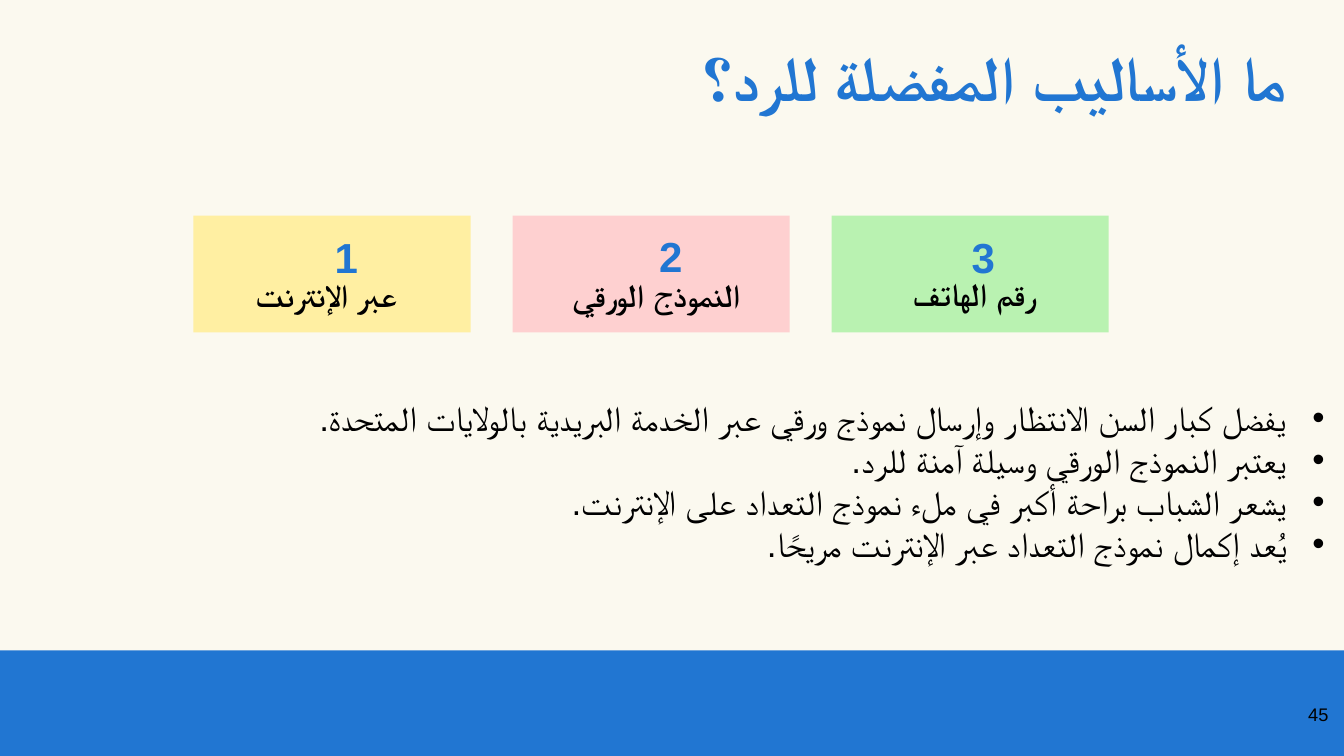
import pptx
import pptx.util
import pptx.dml.color
import pptx.enum.shapes
import pptx.enum.text
import pptx.oxml.ns
from lxml import etree

Pt = pptx.util.Pt
RGB = pptx.dml.color.RGBColor.from_string
ALIGN = pptx.enum.text.PP_ALIGN
RECT = pptx.enum.shapes.MSO_SHAPE.RECTANGLE
qn = pptx.oxml.ns.qn

THEME = {
    "paper": "FBF9EF", "blue": "2176D2", "script": "Arial",
    "title": {"name": "Montserrat", "size": 45, "bold": True, "color": "2176D2"},
    "number": {"name": "Montserrat", "size": 30, "bold": True, "color": "2176D2"},
    "label": {"name": "Open Sans", "size": 23, "bold": True, "color": "000000"},
    "body": {"name": "Open Sans", "size": 25, "bold": False, "color": "000000"},
    "page": {"name": "Calibri", "size": 13, "bold": False, "color": "000000"},
}


def write(sp, box, lines, style, align=ALIGN.RIGHT, bullet=False):
    """Place a text shape and fill it with right-to-left paragraphs."""
    sp.left, sp.top, sp.width, sp.height = map(Pt, box)
    tf = sp.text_frame
    frame = {"word_wrap": True, "auto_size": pptx.enum.text.MSO_AUTO_SIZE.NONE,
             "vertical_anchor": pptx.enum.text.MSO_ANCHOR.TOP}
    for name, value in frame.items():
        setattr(tf, name, value)
    for i, line in enumerate(lines):
        p = tf.paragraphs[0] if i == 0 else tf.add_paragraph()
        pPr = p._p.get_or_add_pPr()
        pPr.set("rtl", "1")
        if bullet:
            pPr.set("marL", str(Pt(27)))
            pPr.set("indent", str(-Pt(27)))
            clr = etree.SubElement(pPr, qn("a:buClr"))
            etree.SubElement(clr, qn("a:srgbClr"), val=THEME[style]["color"])
            etree.SubElement(pPr, qn("a:buFont"), typeface="Arial")
            etree.SubElement(pPr, qn("a:buChar"), char="•")
        layout = {"alignment": align, "line_spacing": 1.0,
                  "space_before": Pt(0), "space_after": Pt(0)}
        for name, value in layout.items():
            setattr(p, name, value)
        r = p.add_run()
        r.text = line
        fmt = THEME[style]
        for name in ("name", "bold"):
            setattr(r.font, name, fmt[name])
        r.font.size = Pt(fmt["size"])
        r.font.color.rgb = RGB(fmt["color"])
        etree.SubElement(r._r.get_or_add_rPr(), qn("a:cs"), typeface=THEME["script"])


def block(s, box, color):
    """Add a plain filled rectangle."""
    sp = s.shapes.add_shape(RECT, *map(Pt, box))
    sp.shadow.inherit = False
    sp.fill.solid()
    sp.fill.fore_color.rgb = RGB(color)
    sp.line.fill.background()


# Slide and background
prs = pptx.Presentation()
prs.slide_width, prs.slide_height = Pt(960), Pt(540)
s = prs.slides.add_slide(prs.slide_layouts[1])
s.background.fill.solid()
s.background.fill.fore_color.rgb = RGB(THEME["paper"])

# Footer band
block(s, (0, 464.5, 960, 75.5), THEME["blue"])

# Title
write(s.shapes.title, (24.5, 23.8, 902, 100), ["ما الأساليب المفضلة للرد؟"], "title")

# Ranked response methods: text, colour, label left and top, number left and top
methods = [
    ("عبر الإنترنت", "FFEFA2", (105.1, 193), (225.4, 162)),
    ("النموذج الورقي", "FED0D0", (340.6, 193), (457.2, 161.3)),
    ("رقم الهاتف", "B9F2B1", (567.4, 192.2), (680.4, 162)),
]
for i, (label, color, label_at, number_at) in enumerate(methods):
    block(s, (138.2 + i * 227.9, 154, 198, 83.5), color)
    write(s.shapes.add_textbox(0, 0, 0, 0), (*label_at, 256.3, 46), [label],
          "label", ALIGN.CENTER)
    write(s.shapes.add_textbox(0, 0, 0, 0), (*number_at, 37.4, 44), [str(i + 1)],
          "number")

# Reasons
write(s.placeholders[1], (116, 279.4, 837.4, 180), [
    "يفضل كبار السن الانتظار وإرسال نموذج ورقي عبر الخدمة البريدية بالولايات المتحدة.",
    "يعتبر النموذج الورقي وسيلة آمنة للرد.",
    "يشعر الشباب براحة أكبر في ملء نموذج التعداد على الإنترنت.",
    "يُعد إكمال نموذج التعداد عبر الإنترنت مريحًا.",
], "body", bullet=True)

# Page number
write(s.shapes.add_textbox(0, 0, 0, 0), (898.5, 499, 57.5, 41), ["45"], "page")

prs.save("out.pptx")
